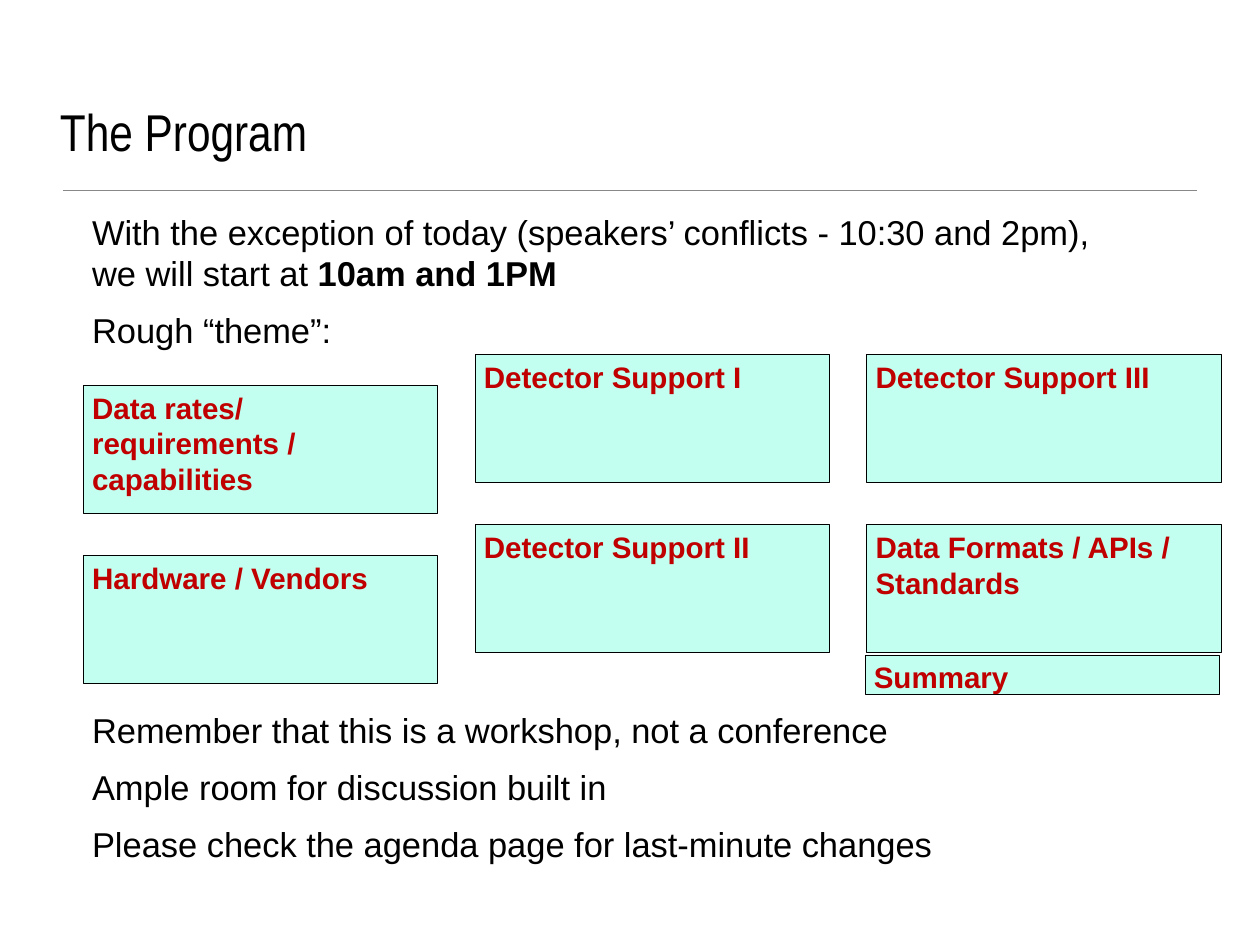
from lxml import etree
from pptx import Presentation
from pptx.dml.color import RGBColor
from pptx.enum.shapes import MSO_CONNECTOR as Connector, MSO_SHAPE as Shape
from pptx.enum.text import MSO_ANCHOR as Anchor, PP_ALIGN as Align
from pptx.oxml.ns import qn
from pptx.util import Cm, Pt

# Content: each paragraph is a list of (words, bold)
TITLE = "The Program"
INTRO = [
    [("With the exception of today (speakers’ conflicts - 10:30 and 2pm), "
      "we will start at ", False), ("10am and 1PM", True)],
    [("Rough “theme”:", False)],
]
CLOSING = [
    [("Remember that this is a workshop, not a conference", False)],
    [("Ample room for discussion built in", False)],
    [("Please check the agenda page for last-minute changes", False)],
]
# One entry per day: top of the first session in cm, then the sessions
DAYS = [
    (11.05, ["Data rates/ requirements / capabilities", "Hardware / Vendors"]),
    (10.16, ["Detector Support I", "Detector Support II"]),
    (10.16, ["Detector Support III", "Data Formats / APIs / Standards"]),
]
SUMMARY = "Summary"

COLORS = {"text": "000000", "rule": "888888", "session": "C2FFF0",
          "border": "000000", "label": "C00000"}

# Layout in cm
LEFT = 2.39
DAY_STEP, SESSION_STEP = 11.23, 4.88
SESSION_W, SESSION_H = 10.16, 3.66


def color(name):
    return RGBColor.from_string(COLORS[name])


def style(paragraph, size, name="text", face="Arial", bold=None):
    font = paragraph.font
    font.name, font.size, font.bold = face, Pt(size), bold
    font.color.rgb = color(name)


def add_text(slide, left, top, width, height):
    frame = slide.shapes.add_textbox(
        Cm(left), Cm(top), Cm(width), Cm(height)).text_frame
    frame.word_wrap = True
    return frame


def add_body(slide, top, height, paragraphs):
    frame = add_text(slide, LEFT, top, 29.97, height)
    for i, pieces in enumerate(paragraphs):
        paragraph = frame.add_paragraph() if i else frame.paragraphs[0]
        if i:
            paragraph.space_before = Pt(12.7)
        style(paragraph, 28)
        for words, bold in pieces:
            run = paragraph.add_run()
            run.text = words
            if bold:
                run.font.bold = True


def add_session(slide, left, top, height, label):
    session = slide.shapes.add_shape(
        Shape.RECTANGLE, Cm(left), Cm(top), Cm(SESSION_W), Cm(height))
    session.shadow.inherit = False
    session.fill.solid()
    session.fill.fore_color.rgb = color("session")
    session.line.color.rgb = color("border")
    session.line.width = Pt(0.75)
    frame = session.text_frame
    frame.word_wrap = True
    frame.vertical_anchor = Anchor.TOP
    paragraph = frame.paragraphs[0]
    paragraph.text = label
    paragraph.alignment = Align.LEFT
    style(paragraph, 24, "label", bold=True)


def main():
    deck = Presentation()
    deck.slide_width, deck.slide_height = Cm(36.12), Cm(27.08)
    slide = deck.slides.add_slide(deck.slide_layouts[6])

    # Title and the rule below it
    rule = slide.shapes.add_connector(
        Connector.STRAIGHT, Cm(1.8), Cm(5.46), Cm(34.32), Cm(5.46))
    rule.line.color.rgb = color("rule")
    rule.line.width = Pt(1)
    etree.SubElement(rule._element.spPr, qn("a:effectLst"))

    heading = add_text(slide, 1.57, 0.91, 32.94, 3.89)
    heading.vertical_anchor = Anchor.BOTTOM
    heading.margin_left = heading.margin_right = Cm(0.15)
    heading.margin_top = heading.margin_bottom = Cm(0.15)
    heading.paragraphs[0].text = TITLE
    style(heading.paragraphs[0], 42, face="Arial Narrow")

    # Text above and below the sessions
    add_body(slide, 5.92, 4.2, INTRO)
    add_body(slide, 20.2, 5, CLOSING)

    # Sessions, one column per day
    for day, (top, sessions) in enumerate(DAYS):
        for i, label in enumerate(sessions):
            add_session(slide, LEFT + day * DAY_STEP, top + i * SESSION_STEP,
                        SESSION_H, label)
    add_session(slide, 24.8, 18.77, 1.12, SUMMARY)

    deck.save("out.pptx")


if __name__ == "__main__":
    main()
